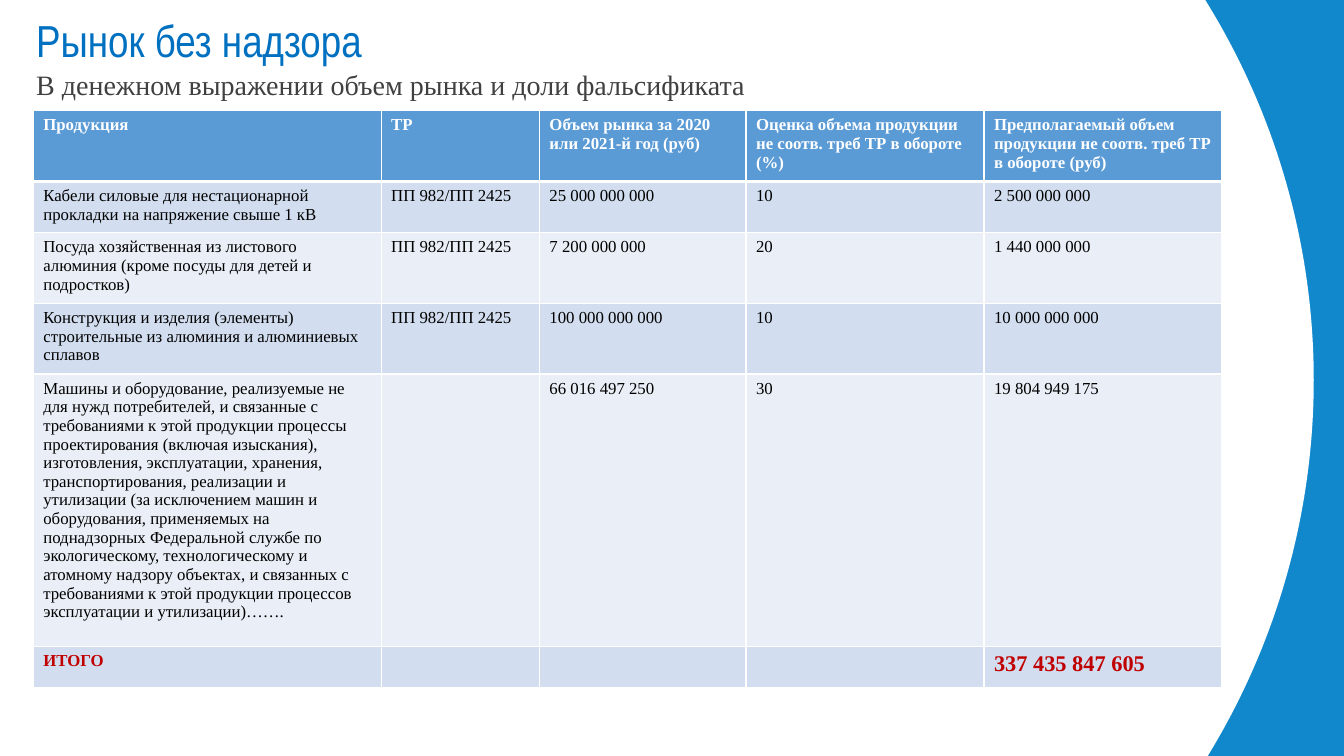
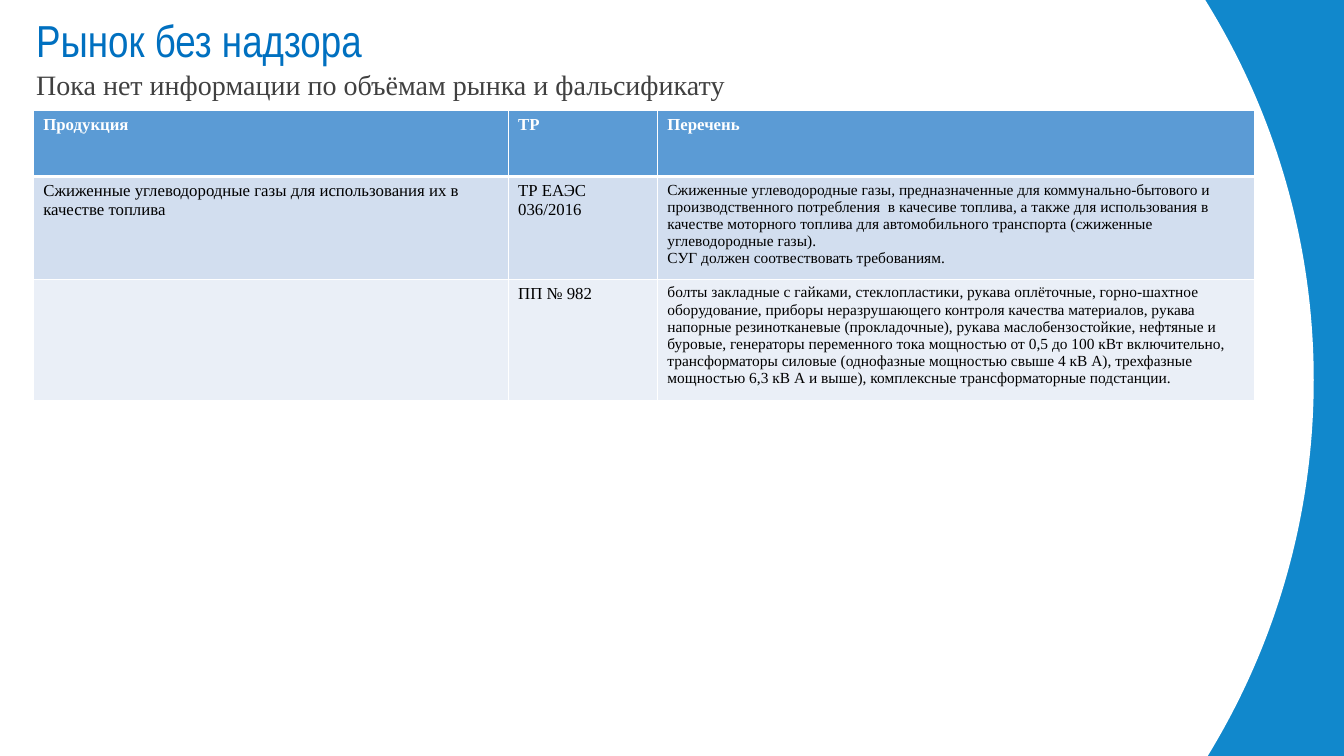
"""Build two slides with tables on products sold without market supervision."""
from lxml.etree import SubElement
from pptx import Presentation
from pptx.dml.color import RGBColor
from pptx.enum.shapes import MSO_SHAPE as Shape
from pptx.enum.text import MSO_AUTO_SIZE as AutoSize
from pptx.oxml.ns import qn
from pptx.util import Inches, Pt

BLUE = RGBColor(0x11, 0x88, 0xCC)
TITLE_BLUE = RGBColor(0x00, 0x70, 0xC0)
GREY = RGBColor(0x40, 0x40, 0x40)
HEADER = RGBColor(0x5B, 0x9B, 0xD5)
BANDS = RGBColor(0xD2, 0xDE, 0xEF), RGBColor(0xEA, 0xEF, 0xF7)
WHITE = RGBColor(0xFF, 0xFF, 0xFF)
BLACK = RGBColor(0x00, 0x00, 0x00)
RED = RGBColor(0xC0, 0x00, 0x00)
SERIF = "Times New Roman"
NARROW = "Arial Narrow"

TOTAL = {"color": RED, "bold": True}
SMALL = {"size": 11}

MARKET_COLS = [3.45, 1.57, 2.05, 2.36, 2.36]
MARKET_HEIGHTS = [0.7, 0.51, 0.7, 0.7, 2.7, 0.41]
MARKET_ROWS = [
    ["Продукция", "ТР", "Объем рынка за 2020 или 2021-й год (руб)",
     "Оценка объема продукции не соотв. треб ТР в обороте (%)",
     "Предполагаемый объем продукции не соотв. треб ТР в обороте (руб)"],
    ["Кабели силовые для нестационарной прокладки на напряжение свыше 1 кВ",
     "ПП 982/ПП 2425", "25 000 000 000", "10", "2 500 000 000"],
    ["Посуда хозяйственная из листового алюминия "
     "(кроме посуды для детей и подростков)",
     "ПП 982/ПП 2425", "7 200 000 000", "20", "1 440 000 000"],
    ["Конструкция и изделия (элементы) строительные из алюминия "
     "и алюминиевых сплавов",
     "ПП 982/ПП 2425", "100 000 000 000", "10", "10 000 000 000"],
    ["Машины и оборудование, реализуемые не для нужд потребителей, и связанные "
     "с требованиями к этой продукции процессы проектирования (включая "
     "изыскания), изготовления, эксплуатации, хранения, транспортирования, "
     "реализации и утилизации (за исключением машин и оборудования, "
     "применяемых на поднадзорных Федеральной службе по экологическому, "
     "технологическому и атомному надзору объектах, и связанных с требованиями "
     "к этой продукции процессов эксплуатации и утилизации)…….",
     "", "66 016 497 250", "30", "19 804 949 175"],
    [("ИТОГО", TOTAL), "", "", "", ("337 435 847 605", {**TOTAL, "size": 16})],
]

UNKNOWN_COLS = [4.71, 1.48, 5.92]
UNKNOWN_HEIGHTS = [0.65, 1.02, 1.2]
UNKNOWN_ROWS = [
    ["Продукция", "ТР", "Перечень"],
    ["Сжиженные углеводородные газы для использования их в качестве топлива",
     "ТР ЕАЭС 036/2016",
     ("Сжиженные углеводородные газы, предназначенные для коммунально-бытового "
      "и производственного потребления  в качесиве топлива, а также для "
      "использования в качестве моторного топлива для автомобильного "
      "транспорта (сжиженные углеводородные газы).\n"
      "СУГ должен соотвествовать требованиям.", SMALL)],
    ["", "ПП № 982",
     ("болты закладные с гайками, стеклопластики, рукава оплёточные, "
      "горно-шахтное оборудование, приборы неразрушающего контроля качества "
      "материалов, рукава напорные резинотканевые (прокладочные), рукава "
      "маслобензостойкие, нефтяные и буровые, генераторы переменного тока "
      "мощностью от 0,5 до 100 кВт включительно, трансформаторы силовые "
      "(однофазные мощностью свыше 4 кВ А), трехфазные мощностью 6,3 кВ А и "
      "выше), комплексные трансформаторные подстанции.", SMALL)],
]


def write(tf, text, size=12, font=SERIF, color=BLACK, bold=False):
    """Write text into a frame, one paragraph per line."""
    for i, line in enumerate(text.split("\n")):
        p = tf.add_paragraph() if i else tf.paragraphs[0]
        r = p.add_run()
        r.text = line
        r.font.size = Pt(size)
        r.font.name = font
        r.font.bold = bold
        r.font.color.rgb = color


def add_text(s, left, top, width, height, text, **fmt):
    """Add a wrapping text box."""
    sp = s.shapes.add_textbox(*map(Inches, (left, top, width, height)))
    tf = sp.text_frame
    tf.word_wrap = True
    tf.auto_size = AutoSize.SHAPE_TO_FIT_TEXT
    write(tf, text, **fmt)


def set_borders(cell, **widths):
    """Draw white borders on a cell, 1 pt unless a side says otherwise."""
    tc_pr = cell._tc.get_or_add_tcPr()
    for side in "LRTB":
        ln = SubElement(tc_pr, qn(f"a:ln{side}"), w=str(Pt(widths.get(side, 1))))
        fill = SubElement(ln, qn("a:solidFill"))
        SubElement(fill, qn("a:srgbClr"), val=str(WHITE))


def add_table(s, cols, heights, rows):
    """Add a banded table with a blue header row."""
    size = Inches(sum(cols)), Inches(sum(heights))
    frame = s.shapes.add_table(len(rows), len(cols), Inches(0.33), Inches(1.1), *size)
    table = frame.table
    for col, width in zip(table.columns, cols):
        col.width = Inches(width)
    for i, (height, row) in enumerate(zip(heights, rows)):
        table.rows[i].height = Inches(height)
        base = {} if i else {"color": WHITE, "bold": True}
        edges = {0: {"B": 3}, 1: {"T": 3}}.get(i, {})
        for j, item in enumerate(row):
            text, fmt = (item, {}) if isinstance(item, str) else item
            cell = table.cell(i, j)
            set_borders(cell, **edges)
            cell.fill.solid()
            cell.fill.fore_color.rgb = BANDS[(i - 1) % 2] if i else HEADER
            if text:
                write(cell.text_frame, text, **{**base, **fmt})


def add_slide(prs, subtitle):
    """Add a slide with the white disc, the title and a subtitle."""
    s = prs.slides.add_slide(prs.slide_layouts[6])
    disc = s.shapes.add_shape(
        Shape.OVAL, *map(Inches, (-1.25, -3.37, 14.28, 14.28)))
    disc.shadow.inherit = False
    disc.fill.solid()
    disc.fill.fore_color.rgb = WHITE
    disc.line.fill.background()
    add_text(s, 0.26, 0.08, 10.31, 0.64, "Рынок без надзора",
             size=32, font=NARROW, color=TITLE_BLUE)
    add_text(s, 0.26, 0.62, 9.42, 0.44, subtitle, size=20, color=GREY)
    return s


def main():
    """Build and save the presentation."""
    prs = Presentation()
    prs.slide_width, prs.slide_height = Inches(13.33), Inches(7.5)
    background = prs.slide_master.background.fill
    background.solid()
    background.fore_color.rgb = BLUE

    s = add_slide(prs, "В денежном выражении объем рынка и доли фальсификата")
    add_table(s, MARKET_COLS, MARKET_HEIGHTS, MARKET_ROWS)
    s = add_slide(prs, "Пока нет информации по объёмам рынка и фальсификату")
    add_table(s, UNKNOWN_COLS, UNKNOWN_HEIGHTS, UNKNOWN_ROWS)
    prs.save("out.pptx")


if __name__ == "__main__":
    main()
